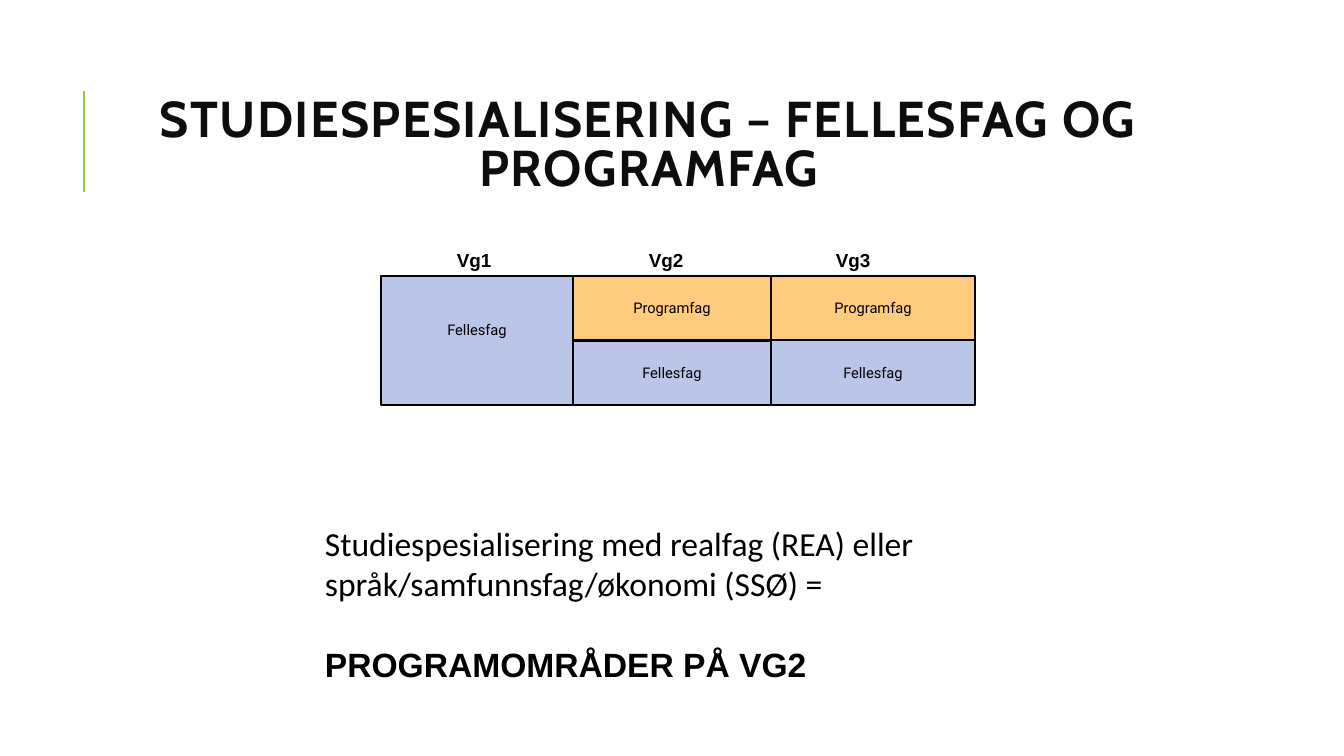
from lxml import etree
from pptx import Presentation
from pptx import util as u
from pptx.dml.color import RGBColor
from pptx.enum import shapes, text
from pptx.oxml.ns import qn

PX = 914400 / 100.8


def px(*lengths):
    """Turn pixel lengths into EMU."""
    return [u.Emu(round(length * PX)) for length in lengths]


def write(para, words, font, size, colour="000000", bold=False):
    span = para.add_run()
    span.text = words
    span.font.name = font
    span.font.size = u.Pt(size)
    span.font.bold = bold
    span.font.color.rgb = RGBColor.from_string(colour)
    return span


deck = Presentation()
deck.slide_width, deck.slide_height = px(1344, 756)
page = deck.slides.add_slide(deck.slide_layouts[5])

# Accent line and title
accent = page.shapes.add_connector(shapes.MSO_CONNECTOR.STRAIGHT, *px(84, 192, 84, 91))
accent.line.color.rgb = RGBColor.from_string("99CB38")
accent.line.width = u.Pt(1.5)
etree.SubElement(accent._element.spPr, qn("a:effectLst"))

title = page.shapes.title
title.left, title.top, title.width, title.height = px(113, 65, 1072, 165)
frame = title.text_frame
frame.word_wrap = True
frame.auto_size = text.MSO_AUTO_SIZE.NONE
frame.vertical_anchor = text.MSO_ANCHOR.MIDDLE
para = frame.paragraphs[0]
para.alignment = text.PP_ALIGN.CENTER
para.line_spacing = 0.8
span = write(para, "STUDIESPESIALISERING – FELLESFAG OG PROGRAMFAG", "Cabin", 36, "0D0D0D", True)
span.font._element.set("spc", "100")

# Subject blocks: name, left, top, width, height, bottom inset
blocks = [
    ("Programfag", 573, 276, 198, 64, 5),
    ("Programfag", 771, 276, 204, 64, 5),
    ("Fellesfag", 573, 341, 198, 64, 5),
    ("Fellesfag", 771, 340, 204, 65, 5),
    ("Fellesfag", 381, 276, 192, 129, 27),
]
for subject, left, top, width, height, inset in blocks:
    box = page.shapes.add_shape(shapes.MSO_SHAPE.RECTANGLE, *px(left, top, width, height))
    box.shadow.inherit = False
    box.fill.solid()
    programme = subject == "Programfag"
    box.fill.fore_color.rgb = RGBColor.from_string("FF9900" if programme else "BAC5E8")
    if programme:
        colour = box._element.spPr.find(qn("a:solidFill"))[0]
        etree.SubElement(colour, qn("a:alpha"), val="50000")
    box.line.color.rgb = RGBColor.from_string("000000")
    box.line.width = u.Pt(1)
    frame = box.text_frame
    frame.vertical_anchor = text.MSO_ANCHOR.MIDDLE
    frame.margin_bottom = px(inset)[0]
    para = frame.paragraphs[0]
    para.alignment = text.PP_ALIGN.CENTER
    write(para, subject, "Roboto", 10.5)

# Year headings
for year, left in (("Vg1", 447), ("Vg2", 639), ("Vg3", 826)):
    box = page.shapes.add_textbox(*px(left, 244, 55, 33))
    box.text_frame.word_wrap = False
    write(box.text_frame.paragraphs[0], year, "Arial", 13.5, bold=True)

# Explanation
box = page.shapes.add_textbox(*px(315, 436, 713, 320))
frame = box.text_frame
frame.word_wrap = True
frame.margin_top = px(87)[0]
write(
    frame.paragraphs[0],
    "Studiespesialisering med realfag (REA) eller språk/samfunnsfag/økonomi (SSØ) =",
    "Calibri",
    24,
)
para = frame.add_paragraph()
para.space_before = u.Pt(29)
write(para, "PROGRAMOMRÅDER PÅ VG2", "Arial", 24, bold=True)

deck.save("out.pptx")
